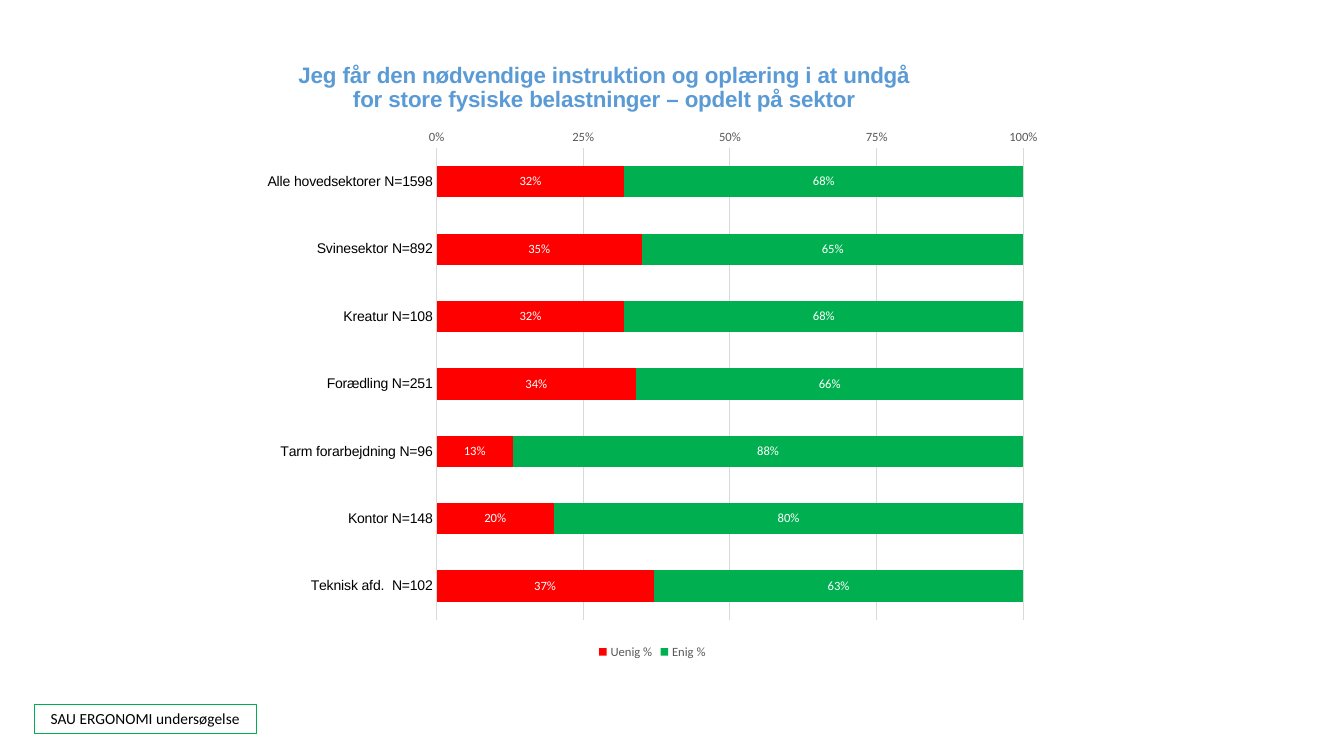
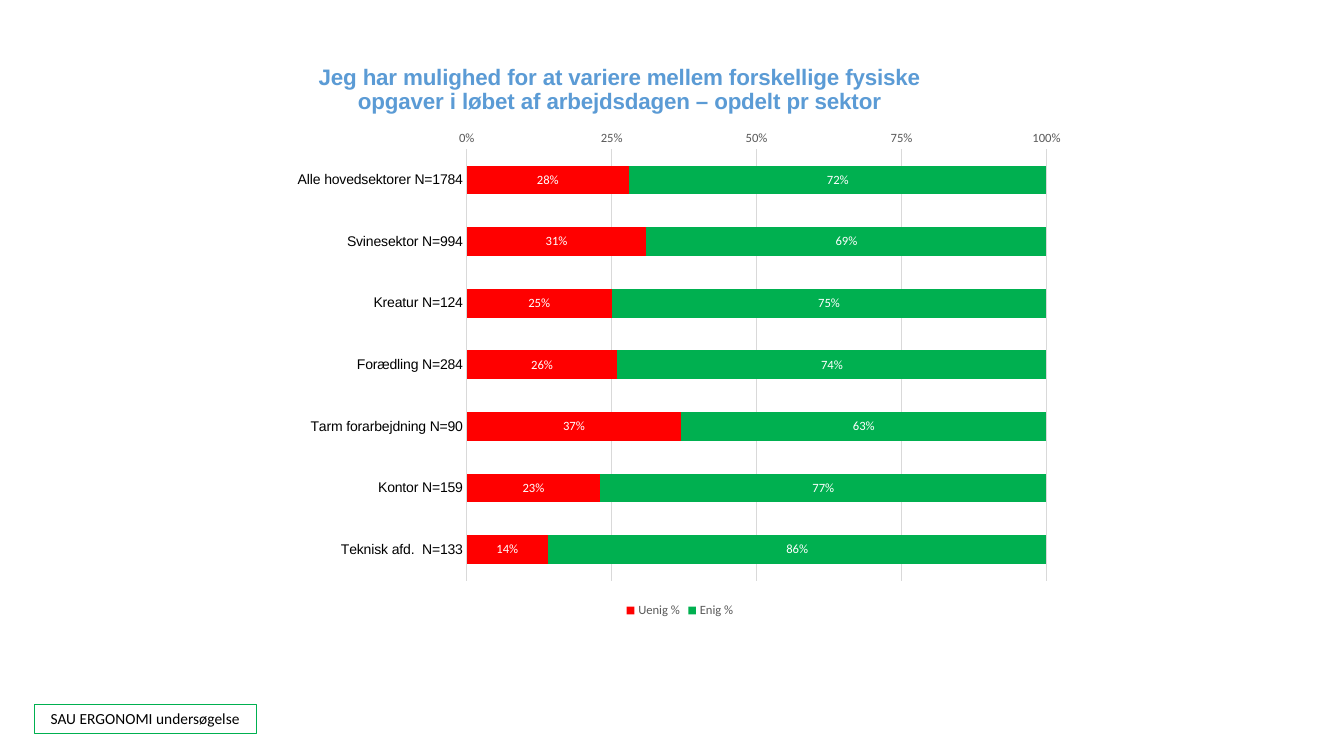
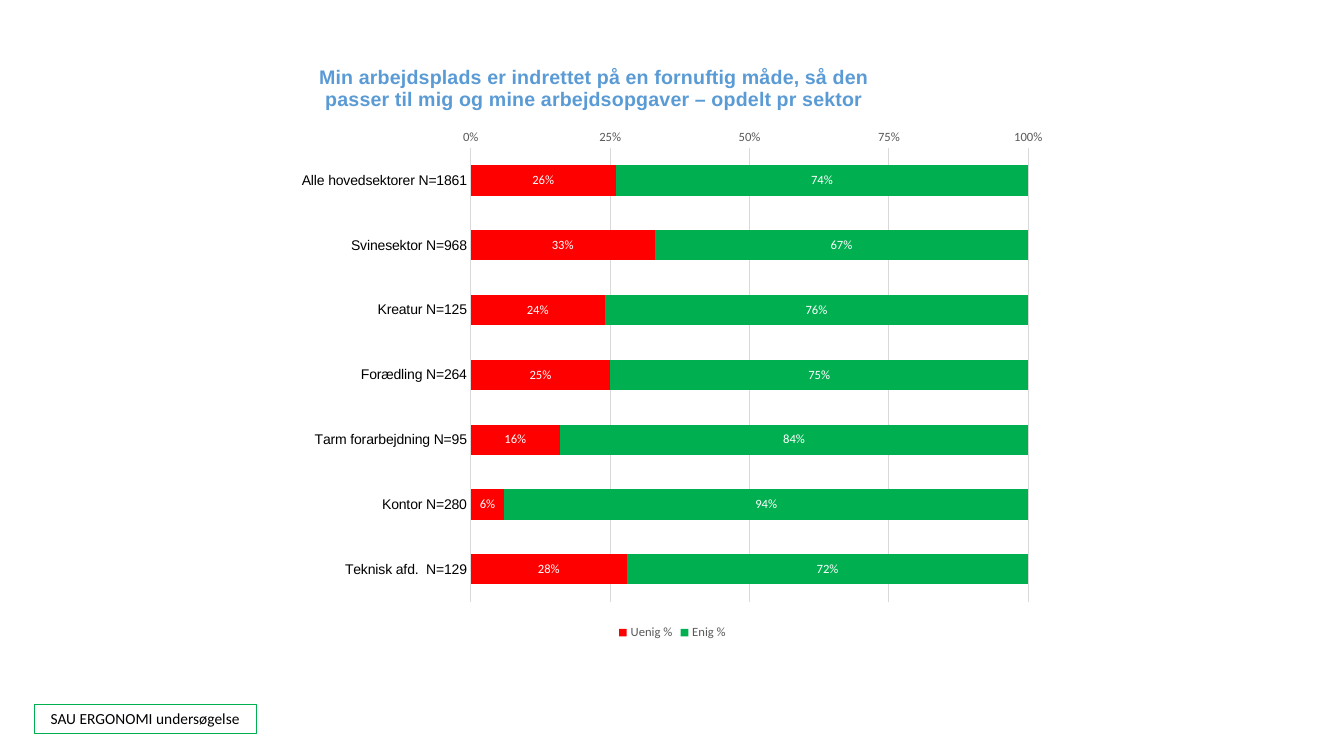
from dataclasses import dataclass

from pptx import Presentation
from pptx.chart.data import CategoryChartData
from pptx.dml.color import RGBColor
from pptx.enum.chart import XL_CHART_TYPE as ChartType
from pptx.enum.chart import XL_LABEL_POSITION as LabelPosition
from pptx.enum.chart import XL_LEGEND_POSITION as LegendPosition
from pptx.enum.chart import XL_TICK_MARK as TickMark
from pptx.enum.shapes import MSO_SHAPE as Shape
from pptx.enum.text import MSO_ANCHOR as Anchor
from pptx.enum.text import PP_ALIGN as Align
from pptx.oxml import parse_xml
from pptx.oxml.ns import nsdecls, qn
from pptx.util import Inches, Pt

# Content: boxes are left, top, width, height in inches
FOOTER = "SAU ERGONOMI undersøgelse"
SECTORS = ["Alle hovedsektorer", "Svinesektor", "Kreatur", "Forædling",
           "Tarm forarbejdning", "Kontor", "Teknisk afd. "]
ANSWERS = ["Uenig %", "Enig %"]
QUESTIONS = [
    {
        "title": "Jeg får den nødvendige instruktion og oplæring i at undgå "
                 "for store fysiske belastninger – opdelt på sektor",
        "title_size": 16,
        "title_at": (2.92, 0.56),
        "chart_box": (2.49, 0.37, 7.96, 6.21),
        "plot_box": (4.33, 1.47, 5.82, 4.68),
        "counts": [1598, 892, 108, 251, 96, 148, 102],
        "values": [(0.32, 0.35, 0.32, 0.34, 0.13, 0.20, 0.37),
                   (0.68, 0.65, 0.68, 0.66, 0.88, 0.80, 0.63)],
    },
    {
        "title": "Jeg har mulighed for at variere mellem forskellige fysiske "
                 "opgaver i løbet af arbejdsdagen – opdelt pr sektor",
        "title_size": 16,
        "title_at": (3.12, 0.58),
        "chart_box": (2.80, 0.40, 7.89, 5.77),
        "plot_box": (4.63, 1.48, 5.75, 4.28),
        "counts": [1784, 994, 124, 284, 90, 159, 133],
        "values": [(0.28, 0.31, 0.25, 0.26, 0.37, 0.23, 0.14),
                   (0.72, 0.69, 0.75, 0.74, 0.63, 0.77, 0.86)],
    },
    {
        "title": "Min arbejdsplads er indrettet på en fornuftig måde, så den "
                 "passer til mig og mine arbejdsopgaver – opdelt pr sektor",
        "title_size": 14,
        "title_at": (3.13, 0.60),
        "chart_box": (2.85, 0.44, 7.64, 5.95),
        "plot_box": (4.67, 1.47, 5.53, 4.50),
        "counts": [1861, 968, 125, 264, 95, 280, 129],
        "values": [(0.26, 0.33, 0.24, 0.25, 0.16, 0.06, 0.28),
                   (0.74, 0.67, 0.76, 0.75, 0.84, 0.94, 0.72)],
    },
]


# Theme
@dataclass(frozen=True)
class Theme:
    title: str = "5B9BD5"
    text: str = "000000"
    muted: str = "595959"
    grid: str = "D9D9D9"
    on_bar: str = "FFFFFF"
    frame: str = "00B050"
    bars: tuple = ("FF0000", "00B050")
    body_font: str = "Calibri"
    label_font: str = "Arial"
    footer_size: int = 11
    category_size: int = 10
    small_size: int = 9


THEME = Theme()


def set_font(font, name, size, color, bold=False):
    font.name, font.size, font.bold = name, Pt(size), bold
    font.color.rgb = RGBColor.from_string(color)


def set_line(line, color, width):
    line.color.rgb = RGBColor.from_string(color)
    line.width = Pt(width)


# Fixed places inside the chart, as fractions of the chart box
def set_layout(parent, index, chart_box, place, target=""):
    for old in parent.findall(qn("c:layout")):
        parent.remove(old)
    left, top, width, height = chart_box
    fractions = [(place[0] - left) / width, (place[1] - top) / height]
    if len(place) == 4:
        fractions += [place[2] / width, place[3] / height]
    modes = '<c:xMode val="edge"/><c:yMode val="edge"/>'
    values = "".join(f'<c:{key} val="{value:.4f}"/>'
                     for key, value in zip("xywh", fractions))
    parent.insert(index, parse_xml(
        f'<c:layout {nsdecls("c")}><c:manualLayout>{target}{modes}{values}'
        "</c:manualLayout></c:layout>"))


def add_footer(slide):
    box = slide.shapes.add_shape(Shape.RECTANGLE, Inches(0.34), Inches(6.99),
                                 Inches(2.2), Inches(0.28))
    box.shadow.inherit = False
    box.fill.background()
    set_line(box.line, THEME.frame, 0.25)
    frame = box.text_frame
    frame.text = FOOTER
    frame.word_wrap = True
    frame.vertical_anchor = Anchor.MIDDLE
    paragraph = frame.paragraphs[0]
    paragraph.alignment = Align.CENTER
    set_font(paragraph.runs[0].font, THEME.body_font, THEME.footer_size, THEME.text)


def style_axes(chart):
    category, value = chart.category_axis, chart.value_axis
    for axis in (category, value):
        axis.major_tick_mark = axis.minor_tick_mark = TickMark.NONE
    category.reverse_order = True
    set_line(category.format.line, THEME.grid, 0.75)
    set_font(category.tick_labels.font, THEME.label_font,
             THEME.category_size, THEME.text)

    value.minimum_scale, value.maximum_scale, value.major_unit = 0, 1, 0.25
    value.format.line.fill.background()
    value.has_major_gridlines = True
    set_line(value.major_gridlines.format.line, THEME.grid, 0.75)
    value.tick_labels.number_format = "0%"
    value.tick_labels.number_format_is_linked = False
    set_font(value.tick_labels.font, THEME.body_font, THEME.small_size, THEME.muted)


def style_bars(plot):
    plot.gap_width, plot.overlap = 115, 100
    plot.vary_by_categories = False
    for series, color in zip(plot.series, THEME.bars):
        series.format.fill.solid()
        series.format.fill.fore_color.rgb = RGBColor.from_string(color)
        labels = series.data_labels
        labels.show_value = True
        labels.position = LabelPosition.CENTER
        labels.number_format, labels.number_format_is_linked = "0%", False
        set_font(labels.font, THEME.body_font, THEME.small_size, THEME.on_bar)


def add_question_chart(slide, question):
    data = CategoryChartData(number_format="0%")
    data.categories = [f"{sector} N={count}"
                       for sector, count in zip(SECTORS, question["counts"])]
    for answer, values in zip(ANSWERS, question["values"]):
        data.add_series(answer, values)
    box = question["chart_box"]
    chart = slide.shapes.add_chart(ChartType.BAR_STACKED,
                                   *map(Inches, box), data).chart
    set_font(chart.font, THEME.body_font, THEME.category_size, THEME.text)

    # Title
    chart.has_title = True
    title = chart.chart_title
    title.text_frame.text = question["title"]
    set_font(title.text_frame.paragraphs[0].runs[0].font, THEME.label_font,
             question["title_size"], THEME.title, bold=True)
    set_layout(title._element, 1, box, question["title_at"])

    # Plot and legend
    style_axes(chart)
    style_bars(chart.plots[0])
    plot_area = chart._chartSpace.chart.plotArea
    set_layout(plot_area, 0, box, question["plot_box"],
               '<c:layoutTarget val="inner"/>')
    chart.has_legend = True
    chart.legend.position = LegendPosition.BOTTOM
    chart.legend.include_in_layout = False
    set_font(chart.legend.font, THEME.body_font, THEME.small_size, THEME.muted)


def main():
    presentation = Presentation()
    presentation.slide_width = Inches(13.33)
    presentation.slide_height = Inches(7.5)
    for question in QUESTIONS:
        slide = presentation.slides.add_slide(presentation.slide_layouts[6])
        add_footer(slide)
        add_question_chart(slide, question)
    presentation.save("out.pptx")


if __name__ == "__main__":
    main()
